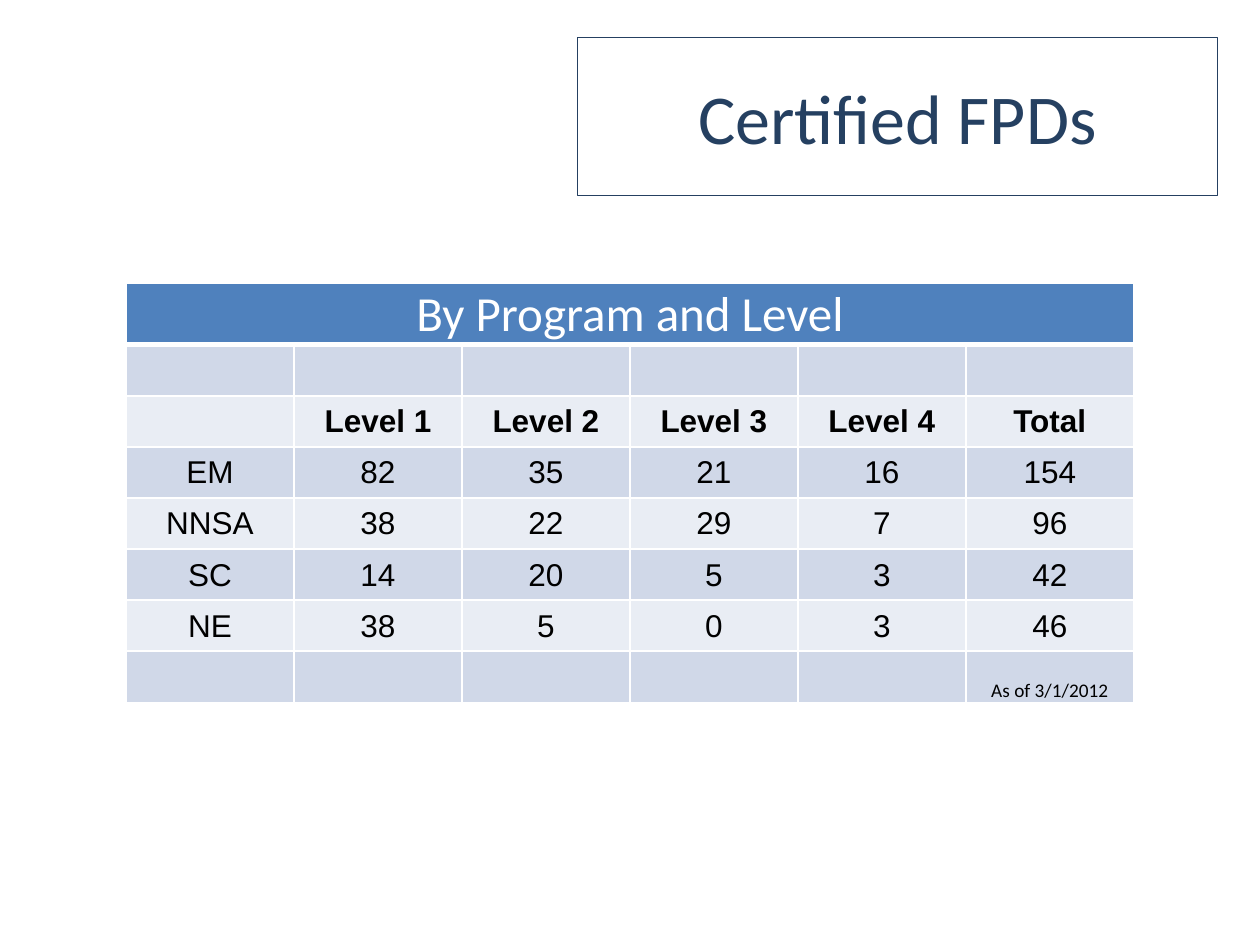
from lxml.etree import SubElement
from pptx import Presentation
from pptx.dml.color import RGBColor
from pptx.enum.shapes import MSO_SHAPE
from pptx.enum.text import MSO_ANCHOR, PP_ALIGN
from pptx.oxml.ns import qn
from pptx.util import Cm, Pt

TITLE = "Certified FPDs"
ROWS = [
    ["By Program and Level", "", "", "", "", ""],
    ["", "", "", "", "", ""],
    ["", "Level 1", "Level 2", "Level 3", "Level 4", "Total"],
    ["EM", "82", "35", "21", "16", "154"],
    ["NNSA", "38", "22", "29", "7", "96"],
    ["SC", "14", "20", "5", "3", "42"],
    ["NE", "38", "5", "0", "3", "46"],
    ["", "", "", "", "", "As of 3/1/2012"],
]
HEADING, LEVELS, NOTE = 0, 2, len(ROWS) - 1

THEME = {
    "navy": "254061", "blue": "4F81BD", "bands": ("E9EDF4", "D0D8E8"),
    "white": "FFFFFF", "black": "000000",
    "head_font": "Calibri", "body_font": "Arial",
    "title": 40, "heading": 28, "body": 18, "note": 11,
}
BODY = dict(font=THEME["body_font"], size=THEME["body"], color=THEME["black"])
ROW_FORMATS = {
    HEADING: dict(font=THEME["head_font"], size=THEME["heading"],
                  color=THEME["white"], anchor=MSO_ANCHOR.BOTTOM),
    LEVELS: dict(BODY, bold=True),
    NOTE: dict(font=THEME["head_font"], size=THEME["note"],
               color=THEME["black"], anchor=MSO_ANCHOR.BOTTOM),
}


def set_fill(obj, color):
    obj.fill.solid()
    obj.fill.fore_color.rgb = RGBColor.from_string(color)


def write(tf, anchored, text, *, font, size, color, bold=False,
          anchor=MSO_ANCHOR.MIDDLE):
    """Write centred text; anchored is the frame or cell that holds the anchor."""
    anchored.vertical_anchor = anchor
    p = tf.paragraphs[0]
    p.alignment = PP_ALIGN.CENTER
    r = p.add_run()
    r.text = text
    r.font.name, r.font.size, r.font.bold = font, Pt(size), bold
    r.font.color.rgb = RGBColor.from_string(color)


def set_borders(cell, color, widths):
    """Draw borders; widths holds points for left, right, top and bottom."""
    tcPr = cell._tc.get_or_add_tcPr()
    for i, (side, width) in enumerate(zip("LRTB", widths)):
        ln = SubElement(tcPr, qn(f"a:ln{side}"), w=str(Pt(width)))
        fill = SubElement(ln, qn("a:solidFill"))
        SubElement(fill, qn("a:srgbClr"), val=color)
        tcPr.insert(i, ln)  # borders come before the cell fill


def add_title(slide):
    sp = slide.shapes.add_shape(MSO_SHAPE.RECTANGLE, Cm(11.64), Cm(0.76),
                                Cm(12.9), Cm(3.18))
    sp.shadow.inherit = False
    set_fill(sp, THEME["white"])
    sp.line.color.rgb = RGBColor.from_string(THEME["navy"])
    sp.line.width = Pt(0.75)
    tf = sp.text_frame
    tf.word_wrap = True
    write(tf, tf, TITLE, font=THEME["head_font"], size=THEME["title"],
          color=THEME["navy"])


def add_level_table(slide):
    row_height = Cm(1.03)
    table = slide.shapes.add_table(len(ROWS), len(ROWS[0]), Cm(2.54), Cm(5.72),
                                   Cm(20.32), row_height * len(ROWS)).table
    table.first_row = table.horz_banding = False
    table.cell(HEADING, 0).merge(table.cell(HEADING, len(ROWS[0]) - 1))
    for i, texts in enumerate(ROWS):
        table.rows[i].height = row_height
        fill = THEME["blue"] if i == HEADING else THEME["bands"][i % 2]
        top = 3 if i == HEADING + 1 else 1
        bottom = 3 if i == HEADING else 1
        for j, text in enumerate(texts):
            cell = table.cell(i, j)
            cell.margin_left = cell.margin_right = cell.margin_top = Cm(0.02)
            cell.margin_bottom = 0
            set_fill(cell, fill)
            set_borders(cell, THEME["white"], (1, 1, top, bottom))
            if text:
                write(cell.text_frame, cell, text, **ROW_FORMATS.get(i, BODY))


def main():
    prs = Presentation()
    prs.slide_width, prs.slide_height = Cm(25.4), Cm(19.05)
    slide = prs.slides.add_slide(prs.slide_layouts[6])
    add_title(slide)
    add_level_table(slide)
    prs.save("out.pptx")


if __name__ == "__main__":
    main()
